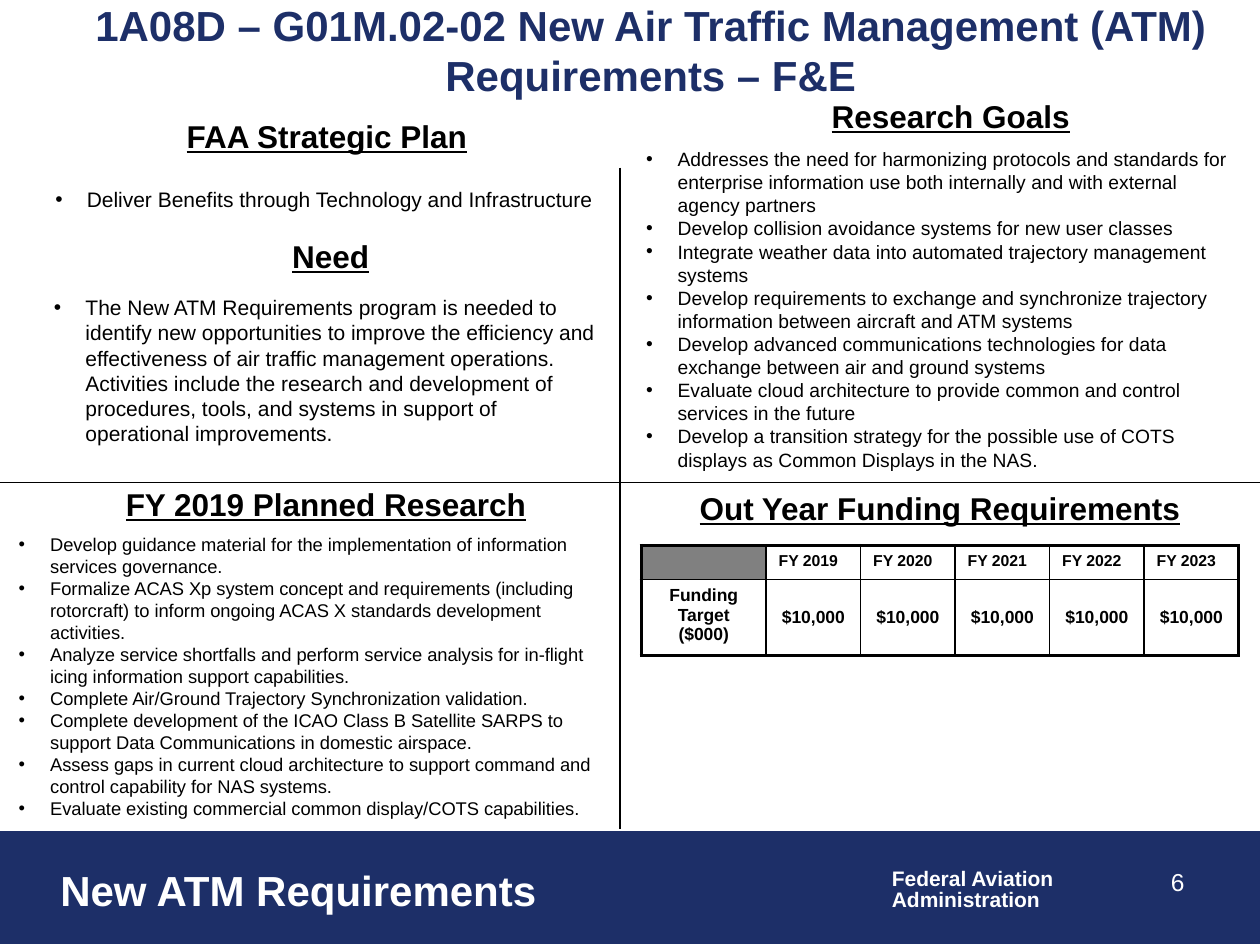
"""Build the New ATM Requirements quad-chart slide."""
from lxml import etree
from pptx import Presentation
from pptx.dml.color import RGBColor
from pptx.enum.shapes import MSO_CONNECTOR, MSO_SHAPE
from pptx.enum.text import MSO_ANCHOR, PP_ALIGN
from pptx.oxml.ns import qn
from pptx.util import Inches, Pt

NAVY = RGBColor(0x1D, 0x2F, 0x68)
WHITE = RGBColor(0xFF, 0xFF, 0xFF)
BLACK = RGBColor(0, 0, 0)
GRAY = RGBColor(0x80, 0x80, 0x80)
LEFT, CENTER, RIGHT = PP_ALIGN.LEFT, PP_ALIGN.CENTER, PP_ALIGN.RIGHT
TOP, MIDDLE = MSO_ANCHOR.TOP, MSO_ANCHOR.MIDDLE
STRAIGHT = MSO_CONNECTOR.STRAIGHT
RECTANGLE = MSO_SHAPE.RECTANGLE


class QuadSlide:
    """Hold the slide and its style, with a method for each kind of element."""

    font_name = "Arial"
    indent = Inches(0.25)
    thin, thick = 1, 2.25

    def __init__(self, slide):
        self.slide = slide

    def style(self, paragraph, size, color=BLACK, bold=False, underline=False, align=LEFT):
        paragraph.alignment = align
        for run in paragraph.runs:
            run.font.name = self.font_name
            run.font.size = Pt(size)
            run.font.color.rgb = color
            run.font.bold = bold
            run.font.underline = underline

    def text(self, box, lines, size, anchor=TOP, wrap=True, spacing=None, bullets=False, **look):
        frame = self.slide.shapes.add_textbox(*map(Inches, box)).text_frame
        frame.word_wrap = wrap
        frame.vertical_anchor = anchor
        frame.text = "\n".join(lines)
        for paragraph in frame.paragraphs:
            if bullets:
                self.bullet(paragraph)
            if spacing:
                paragraph.line_spacing = spacing
            self.style(paragraph, size, **look)

    def bullet(self, paragraph):
        properties = paragraph._p.get_or_add_pPr()
        properties.set("marL", str(self.indent))
        properties.set("indent", str(-self.indent))
        etree.SubElement(properties, qn("a:buFont"), typeface=self.font_name)
        etree.SubElement(properties, qn("a:buChar"), char="•")

    def heading(self, box, title, align=CENTER):
        self.text(box, [title], 18, bold=True, underline=True, align=align)

    def bullets(self, box, items, size):
        self.text(box, items, size, bullets=True)

    def band(self, box, color):
        band = self.slide.shapes.add_shape(RECTANGLE, *map(Inches, box))
        band.shadow.inherit = False
        band.fill.solid()
        band.fill.fore_color.rgb = color
        band.line.color.rgb = color
        band.line.width = Pt(0.75)

    def divider(self, *ends):
        divider = self.slide.shapes.add_connector(STRAIGHT, *map(Inches, ends))
        divider.line.color.rgb = BLACK
        divider.line.width = Pt(0.75)
        etree.SubElement(divider._element.spPr, qn("a:effectLst"))

    def borders(self, cell, widths):
        properties = cell._tc.get_or_add_tcPr()
        for side, width in zip("LRTB", widths):
            border = etree.SubElement(properties, qn(f"a:ln{side}"), w=str(Pt(width)))
            fill = etree.SubElement(border, qn("a:solidFill"))
            etree.SubElement(fill, qn("a:srgbClr"), val=str(BLACK))

    def table(self, box, widths, heights, rows):
        frame = self.slide.shapes.add_table(len(rows), len(widths), *map(Inches, box))
        table = frame.table
        table.first_row = table.horz_banding = False
        for column, width in zip(table.columns, widths):
            column.width = Inches(width)
        for row, height in zip(table.rows, heights):
            row.height = Inches(height)
        last_row, last_column = len(rows) - 1, len(widths) - 1
        for r, values in enumerate(rows):
            for c, value in enumerate(values):
                cell = table.cell(r, c)
                outer = (c == 0, c == last_column, r == 0, r == last_row)
                self.borders(cell, [self.thick if edge else self.thin for edge in outer])
                cell.fill.solid()
                cell.fill.fore_color.rgb = WHITE if value else GRAY
                cell.vertical_anchor = MIDDLE if r and c else TOP
                paragraph = cell.text_frame.paragraphs[0]
                if value:
                    paragraph.text = value
                    self.style(paragraph, 10 if r else 9, bold=True, align=CENTER if r else LEFT)
                else:
                    etree.SubElement(paragraph._p, qn("a:endParaRPr"), sz="900")


def main():
    deck = Presentation()
    deck.slide_width, deck.slide_height = Inches(10), Inches(7.5)
    quad = QuadSlide(deck.slides.add_slide(deck.slide_layouts[6]))

    quad.band((0, 6.6, 10, 0.89), NAVY)
    quad.text((6.98, 6.85, 1.5, 0.44), ["Federal Aviation", "Administration"], 12,
              wrap=False, spacing=0.85, color=WHITE, bold=True)
    quad.text((0.38, 6.81, 4.28, 0.52), ["New ATM Requirements"], 24, color=WHITE, bold=True)
    quad.text((7.17, 6.83, 2.33, 0.52), ["6"], 14, color=WHITE, align=RIGHT)
    quad.text((0.53, 0.06, 9.27, 0.67),
              ["1A08D – G01M.02-02 New Air Traffic Management (ATM) Requirements – F&E"],
              24, anchor=MIDDLE, color=NAVY, bold=True, align=CENTER)

    quad.divider(4.92, 1.33, 4.92, 6.58)
    quad.divider(0, 3.83, 10, 3.83)

    quad.heading((0.68, 0.88, 3.83, 0.33), "FAA Strategic Plan")
    quad.bullets((0.34, 1.43, 4.58, 0.3),
                 ["Deliver Benefits through Technology and Infrastructure"], 12)

    quad.heading((0.71, 1.83, 3.83, 0.33), "Need")
    quad.bullets((0.33, 2.29, 4.58, 1.31), [
        "The New ATM Requirements program is needed to identify new opportunities to improve "
        "the efficiency and effectiveness of air traffic management operations. Activities "
        "include the research and development of procedures, tools, and systems in support of "
        "operational improvements.",
    ], 12)

    quad.heading((5.42, 0.72, 4.25, 0.33), "Research Goals")
    quad.bullets((5.03, 1.12, 4.83, 2.69), [
        "Addresses the need for harmonizing protocols and standards for enterprise information "
        "use both internally and with external agency partners",
        "Develop collision avoidance systems for new user classes",
        "Integrate weather data into automated trajectory management systems",
        "Develop requirements to exchange and synchronize trajectory information between "
        "aircraft and ATM systems",
        "Develop advanced communications technologies for data exchange between air and "
        "ground systems",
        "Evaluate cloud architecture to provide common and control services in the future",
        "Develop a transition strategy for the possible use of COTS displays as Common "
        "Displays in the NAS.",
    ], 11)

    quad.heading((0.9, 3.8, 4.17, 0.38), "FY 2019 Planned Research", align=LEFT)
    quad.bullets((0.05, 4.18, 4.78, 2.4), [
        "Develop guidance material for the implementation of information services governance.",
        "Formalize ACAS Xp system concept and requirements (including rotorcraft) to inform "
        "ongoing ACAS X standards development activities.",
        "Analyze service shortfalls and perform service analysis for in-flight icing "
        "information support capabilities.",
        "Complete Air/Ground Trajectory Synchronization validation.",
        "Complete development of the ICAO Class B Satellite SARPS to support Data "
        "Communications in domestic airspace.",
        "Assess gaps in current cloud architecture to support command and control capability "
        "for NAS systems.",
        "Evaluate existing commercial common display/COTS capabilities.",
    ], 10.5)

    quad.heading((5.25, 3.83, 4.42, 0.54), "Out Year Funding Requirements")
    years = [f"FY {year}" for year in range(2019, 2024)]
    quad.table((5.09, 4.33, 4.75, 0.87), [0.99] + [0.75] * len(years), [0.27, 0.6], [
        [""] + years,
        ["Funding Target ($000)"] + ["$10,000"] * len(years),
    ])

    deck.save("out.pptx")


if __name__ == "__main__":
    main()
